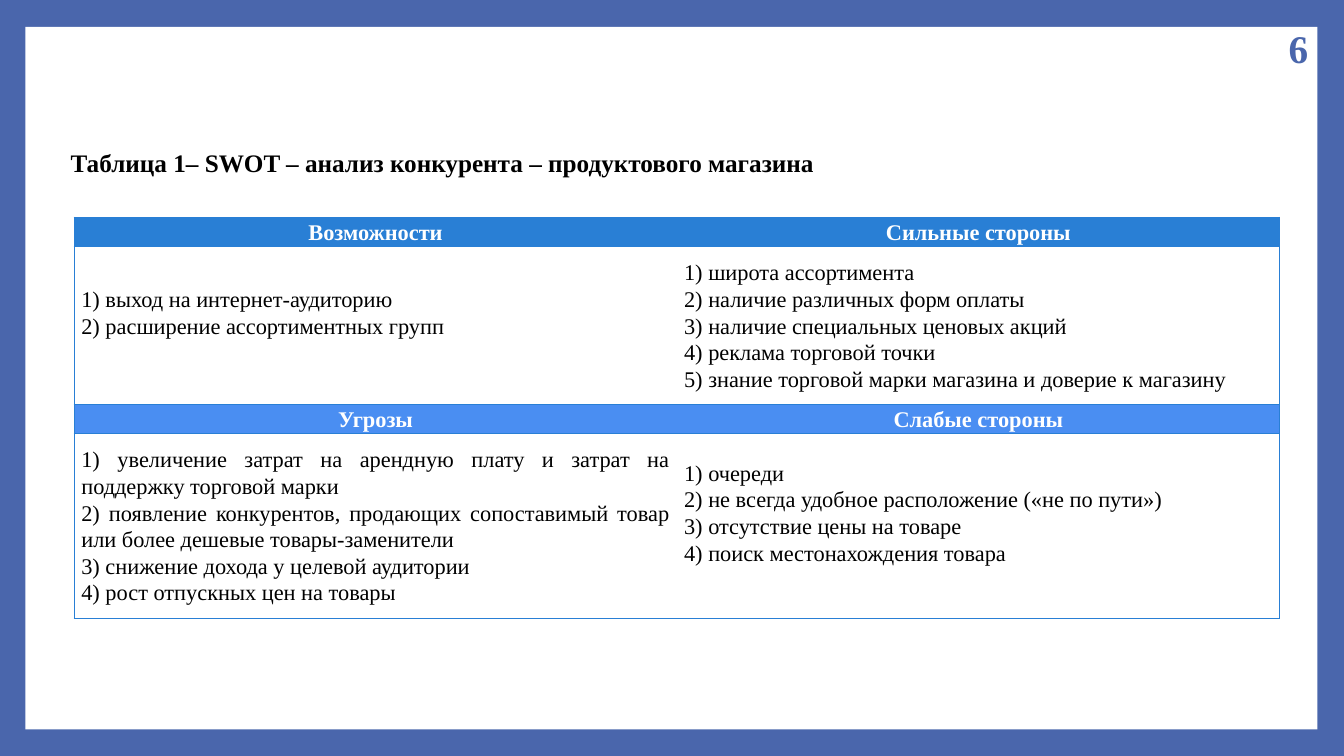
import pptx
import pptx.util
import pptx.dml.color
import pptx.enum.text
import pptx.enum.shapes
import pptx.oxml
import pptx.oxml.ns

Cm = pptx.util.Cm
Pt = pptx.util.Pt
RGBColor = pptx.dml.color.RGBColor
ALIGN = pptx.enum.text.PP_ALIGN
ANCHOR = pptx.enum.text.MSO_ANCHOR

FONT = "Times New Roman"
FRAME = RGBColor(0x4A, 0x66, 0xAC)
BLUE = RGBColor(0x29, 0x7F, 0xD5)
LIGHT = RGBColor(0x4A, 0x8E, 0xF2)
WHITE = RGBColor(0xFF, 0xFF, 0xFF)
BLACK = RGBColor(0, 0, 0)

LINE = 0.67
INSET = 0.18
ROWS = [
    (0.74, BLUE, [["Возможности"], ["Сильные стороны"]]),
    (3.97, None, [
        ["1) выход на интернет-аудиторию",
         "2) расширение ассортиментных групп"],
        ["1) широта ассортимента",
         "2) наличие различных форм оплаты",
         "3) наличие специальных ценовых акций",
         "4) реклама торговой точки",
         "5) знание торговой марки магазина и доверие к магазину"],
    ]),
    (0.74, LIGHT, [["Угрозы"], ["Слабые стороны"]]),
    (4.65, None, [
        ["1) увеличение затрат на арендную плату и затрат на поддержку торговой марки",
         "2) появление конкурентов, продающих сопоставимый товар "
         "или более дешевые товары-заменители",
         "3) снижение дохода у целевой аудитории",
         "4) рост отпускных цен на товары"],
        ["1) очереди",
         "2) не всегда удобное расположение («не по пути»)",
         "3) отсутствие цены на товаре",
         "4) поиск местонахождения товара"],
    ]),
]
RAISED = {(1, 0), (3, 1)}


def add_run(par, text, size, color, bold):
    """Add one styled run to a paragraph."""
    run = par.add_run()
    run.text = text
    run.font.name = FONT
    run.font.size = Pt(size)
    run.font.bold = bold
    run.font.color.rgb = color


def add_panel(slide):
    """Draw the white panel that leaves a coloured frame."""
    rect = pptx.enum.shapes.MSO_SHAPE.RECTANGLE
    panel = slide.shapes.add_shape(rect, Cm(0.64), Cm(0.68), Cm(32.56), Cm(17.7))
    panel.shadow.inherit = False
    panel.fill.solid()
    panel.fill.fore_color.rgb = WHITE
    panel.line.fill.background()


def add_label(slide, place, text, size, color, align, anchor, inset):
    """Add a text box with one bold line."""
    frame = slide.shapes.add_textbox(*map(Cm, place)).text_frame
    frame.word_wrap = True
    frame.vertical_anchor = anchor
    frame.margin_left = frame.margin_right = Cm(inset)
    frame.paragraphs[0].alignment = align
    add_run(frame.paragraphs[0], text, size, color, True)


def set_edges(cell, sides):
    """Draw the given sides of a cell and clear the others."""
    props = cell._tc.get_or_add_tcPr()
    for side in "LRTB":
        paint = "<a:noFill/>"
        if side in sides:
            paint = f'<a:solidFill><a:srgbClr val="{BLUE}"/></a:solidFill>'
        props.append(pptx.oxml.parse_xml(
            f'<a:ln{side} {pptx.oxml.ns.nsdecls("a")} w="{Pt(0.79)}">{paint}</a:ln{side}>'))


def fill_cell(cell, lines, fill, raised):
    """Write the lines of a cell and set its fill."""
    cell.vertical_anchor = ANCHOR.MIDDLE
    cell.margin_left = cell.margin_right = Cm(INSET)
    cell.margin_top = 0
    cell.margin_bottom = Cm(LINE if raised else 0)
    if fill is None:
        cell.fill.background()
    else:
        cell.fill.solid()
        cell.fill.fore_color.rgb = fill
    frame = cell.text_frame
    for num, line in enumerate(lines):
        par = frame.add_paragraph() if num else frame.paragraphs[0]
        par.alignment = ALIGN.CENTER if fill else ALIGN.JUSTIFY
        par.line_spacing = 1.07
        add_run(par, line, 16, WHITE if fill else BLACK, bool(fill))


def add_swot(slide):
    """Add the SWOT table."""
    high = sum(row[0] for row in ROWS)
    table = slide.shapes.add_table(
        len(ROWS), 2, Cm(1.87), Cm(5.48), Cm(30.38), Cm(high)).table
    table.horz_banding = False
    for top, (size, fill, texts) in enumerate(ROWS):
        table.rows[top].height = Cm(size)
        for col, lines in enumerate(texts):
            cell = table.cell(top, col)
            set_edges(cell, "TB" + "LR"[col])
            fill_cell(cell, lines, fill, (top, col) in RAISED)


def main():
    """Build the slide and save it."""
    deck = pptx.Presentation()
    deck.slide_width, deck.slide_height = Cm(33.87), Cm(19.05)
    slide = deck.slides.add_slide(deck.slide_layouts[6])
    slide.background.fill.solid()
    slide.background.fill.fore_color.rgb = FRAME
    add_panel(slide)
    add_label(slide, (1.53, 3.6, 19.9, 1.03),
              "Таблица 1– SWOT – анализ конкурента – продуктового магазина",
              18, BLACK, ALIGN.LEFT, ANCHOR.TOP, 0.25)
    add_swot(slide)
    add_label(slide, (32.24, 0.68, 0.91, 1.03), "6",
              28, FRAME, ALIGN.RIGHT, ANCHOR.MIDDLE, INSET)
    deck.save("out.pptx")


if __name__ == "__main__":
    main()
